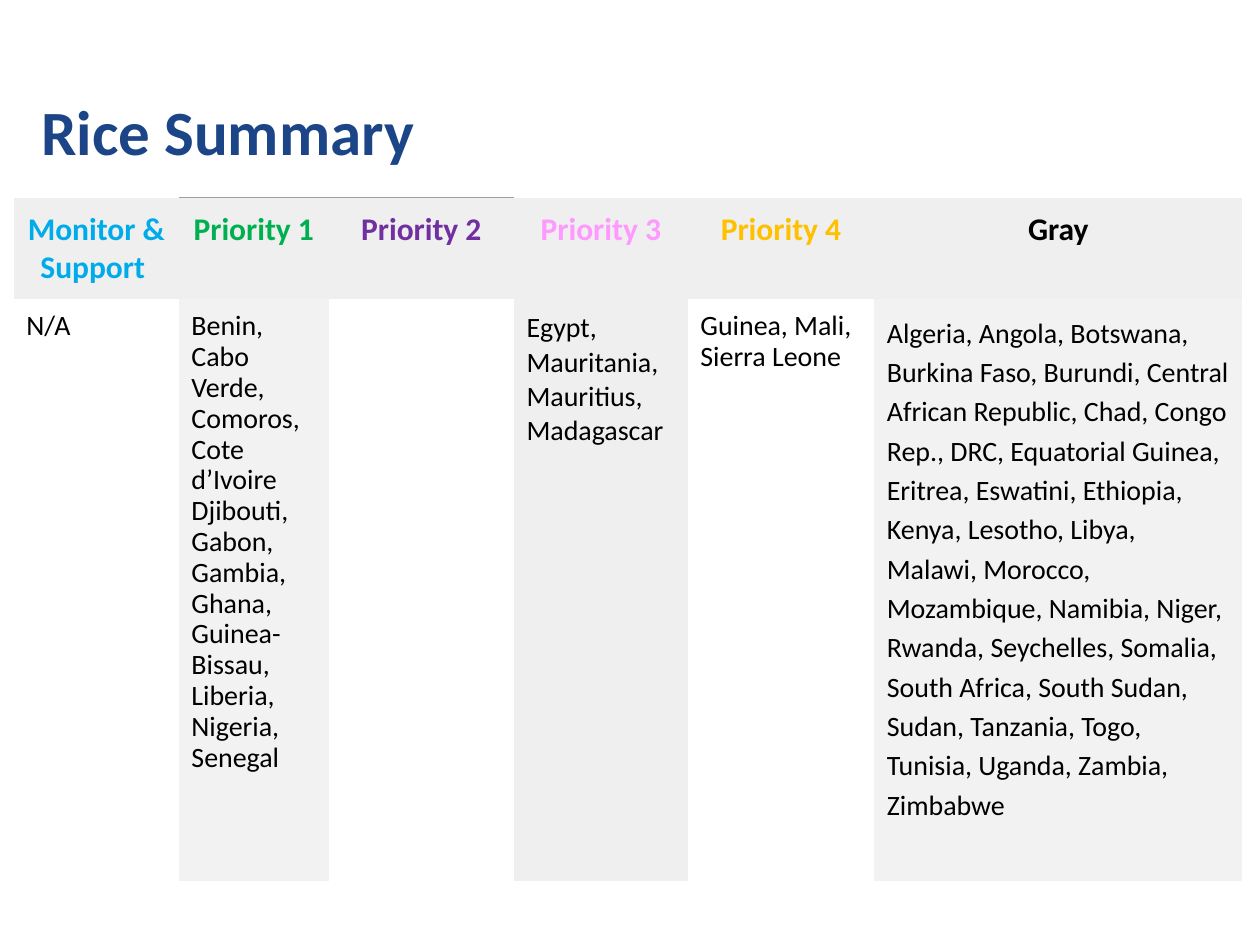
from lxml import etree
from pptx import Presentation
from pptx import util as u
from pptx.dml.color import RGBColor
from pptx.enum import text
from pptx.oxml.ns import qn

FONT = "Calibri"
BLACK = "000000"
PALE = "EFEFEF"
LIGHT = "F2F2F2"
RULE = "9E9E9E"

# Header, header colour, top rule, countries, body fill, line spacing, width
COLS = [
    ("Monitor & Support ", "00ABEA", None, "N/A", None, 0.9, 1.31),
    ("Priority 1", "00B050", RULE,
     "Benin, Cabo Verde, Comoros, Cote d’Ivoire Djibouti, Gabon, Gambia, "
     "Ghana, Guinea-Bissau, Liberia, Nigeria, Senegal", LIGHT, 0.9, 1.19),
    ("Priority 2", "7030A0", RULE, "", None, 0.9, 1.47),
    ("Priority 3", "FF99FF", None,
     "Egypt, Mauritania, Mauritius, Madagascar", PALE, 1.0, 1.38),
    ("Priority 4", "FFC000", None,
     "Guinea, Mali, Sierra Leone", None, 0.9, 1.48),
    ("Gray", BLACK, None,
     "Algeria, Angola, Botswana, Burkina Faso, Burundi, Central African "
     "Republic, Chad, Congo Rep., DRC, Equatorial Guinea, Eritrea, Eswatini, "
     "Ethiopia, Kenya, Lesotho, Libya, Malawi, Morocco, Mozambique, Namibia, "
     "Niger, Rwanda, Seychelles, Somalia, South Africa, South Sudan, Sudan, "
     "Tanzania, Togo, Tunisia, Uganda, Zambia, Zimbabwe", LIGHT, 1.15, 2.92),
]
ROWS = [0.8, 4.62]


def color(code):
    return RGBColor.from_string(code)


class Deck:
    def __init__(self, wide, high):
        self.prs = Presentation()
        self.prs.slide_width = u.Inches(wide)
        self.prs.slide_height = u.Inches(high)
        self.slide = self.prs.slides.add_slide(self.prs.slide_layouts[6])

    def label(self, frame, words, size, ink, bold=False, space=1.0, align=None):
        para = frame.paragraphs[0]
        para.line_spacing = space
        para.alignment = align
        para.font.size = u.Pt(size)
        if words:
            run = para.add_run()
            run.text = words
            run.font.name = FONT
            run.font.size = u.Pt(size)
            run.font.bold = bold
            run.font.color.rgb = color(ink)

    def title(self, words, left, top, wide, high):
        box = self.slide.shapes.add_textbox(
            *map(u.Inches, (left, top, wide, high)))
        frame = box.text_frame
        frame.word_wrap = True
        frame.vertical_anchor = text.MSO_ANCHOR.MIDDLE
        self.label(frame, words, 36, "1C4587", bold=True, space=0.9)

    def table(self, left, top, wides, highs):
        size = (left, top, sum(wides), sum(highs))
        grid = self.slide.shapes.add_table(
            len(highs), len(wides), *map(u.Inches, size)).table
        grid.first_row = grid.horz_banding = False
        for col, wide in zip(grid.columns, wides):
            col.width = u.Inches(wide)
        for row, high in zip(grid.rows, highs):
            row.height = u.Inches(high)
        return grid

    def cell(self, cell, words, fill, rule=None, **style):
        cell.margin_left = cell.margin_right = u.Inches(0.1)
        cell.margin_top = cell.margin_bottom = u.Inches(0.1)
        if fill:
            cell.fill.solid()
            cell.fill.fore_color.rgb = color(fill)
        else:
            cell.fill.background()
        self.edges(cell, rule)
        self.label(cell.text_frame, words, **style)

    def edges(self, cell, rule):
        props = cell._tc.get_or_add_tcPr()
        for spot, side in enumerate(("lnL", "lnR", "lnT", "lnB")):
            line = etree.Element(qn("a:" + side), w=str(u.Pt(0.75)))
            if rule and side == "lnT":
                solid = etree.SubElement(line, qn("a:solidFill"))
                etree.SubElement(solid, qn("a:srgbClr"), val=rule)
            else:
                etree.SubElement(line, qn("a:noFill"))
            props.insert(spot, line)


def main():
    deck = Deck(10, 7.5)
    deck.title("Rice Summary", 0.23, 0.55, 4.69, 1.04)

    # Priority table: one header and one list of countries per column
    grid = deck.table(0.11, 1.57, [col[-1] for col in COLS], ROWS)
    for i, (head, ink, rule, lands, fill, space, _) in enumerate(COLS):
        deck.cell(grid.cell(0, i), head, PALE, rule, size=18, ink=ink,
                  bold=True, align=text.PP_ALIGN.CENTER)
        deck.cell(grid.cell(1, i), lands, fill, size=16, ink=BLACK,
                  space=space)

    deck.prs.save("out.pptx")


if __name__ == "__main__":
    main()
